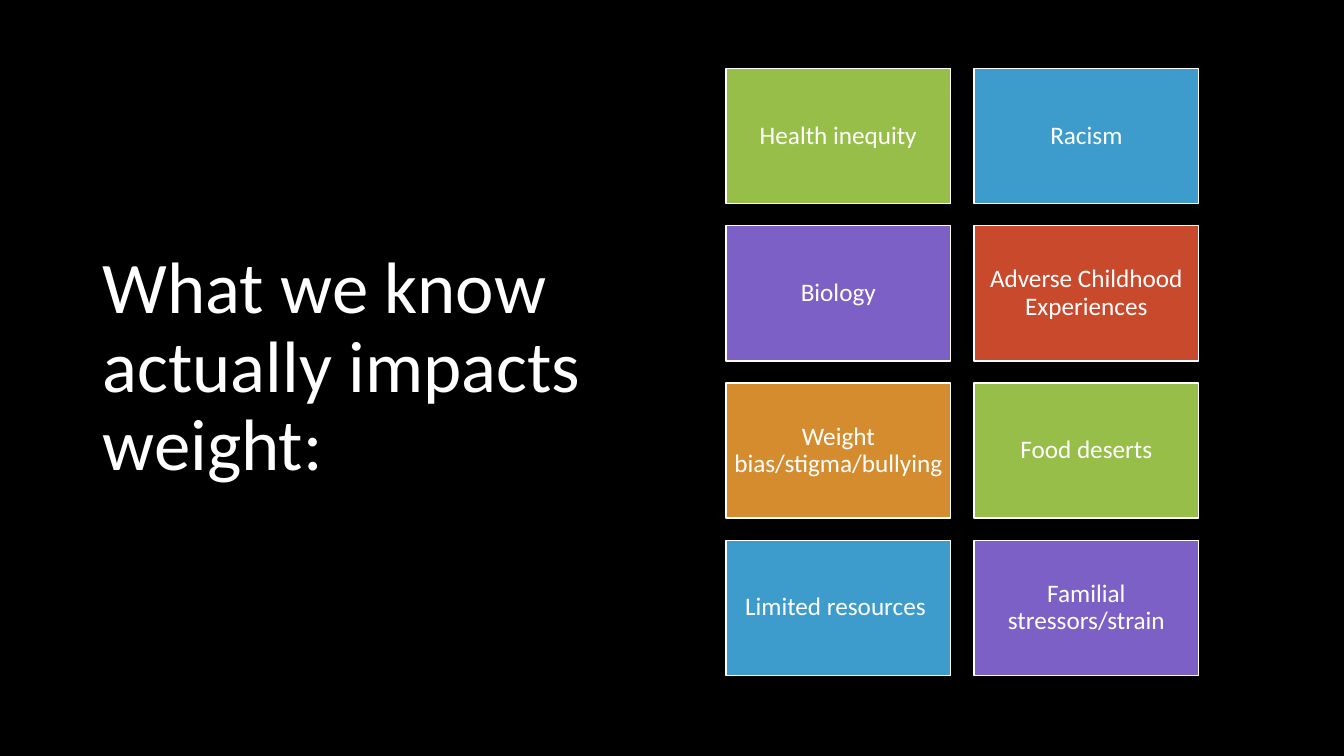
"""Build the slide on what actually impacts weight."""
from pptx import Presentation
from pptx.dml.color import RGBColor
from pptx.enum.shapes import MSO_SHAPE
from pptx.enum.text import MSO_ANCHOR, PP_ALIGN
from pptx.util import Inches, Pt

COLOURS = {
    "black": "000000",
    "white": "FFFFFF",
    "green": "97BE49",
    "blue": "3D9CCC",
    "purple": "7C60C6",
    "red": "C9492C",
    "orange": "D58C2E",
}
FACTORS = [
    ("Health inequity", "green"),
    ("Racism", "blue"),
    ("Biology", "purple"),
    ("Adverse Childhood Experiences", "red"),
    ("Weight bias/stigma/bullying", "orange"),
    ("Food deserts", "green"),
    ("Limited resources ", "blue"),
    ("Familial stressors/strain", "purple"),
]
COLUMNS = 2
GRID_LEFT, GRID_TOP = 7.2, 0.68
BOX_WIDTH, BOX_HEIGHT = 2.23, 1.34
COLUMN_STEP, ROW_STEP = 2.46, 1.56


def colour(name):
    return RGBColor.from_string(COLOURS[name])


def write(frame, text, size, alignment):
    frame.word_wrap = True
    frame.vertical_anchor = MSO_ANCHOR.MIDDLE
    para = frame.paragraphs[0]
    para.alignment = alignment
    para.line_spacing = 0.9
    span = para.add_run()
    span.text = text
    span.font.name = "Calibri"
    span.font.size = Pt(size)
    span.font.color.rgb = colour("white")


deck = Presentation()
deck.slide_width, deck.slide_height = Inches(13.33), Inches(7.5)
page = deck.slides.add_slide(deck.slide_layouts[5])
page.background.fill.solid()
page.background.fill.fore_color.rgb = colour("black")

title = page.shapes.title
title.left, title.top = Inches(0.92), Inches(0.61)
title.width, title.height = Inches(5.32), Inches(6.09)
write(title.text_frame, "What we know actually impacts weight:", 52, PP_ALIGN.LEFT)

for index, (factor, fill) in enumerate(FACTORS):
    row, column = divmod(index, COLUMNS)
    box = page.shapes.add_shape(
        MSO_SHAPE.RECTANGLE,
        Inches(GRID_LEFT + column * COLUMN_STEP),
        Inches(GRID_TOP + row * ROW_STEP),
        Inches(BOX_WIDTH),
        Inches(BOX_HEIGHT),
    )
    box.shadow.inherit = False
    box.fill.solid()
    box.fill.fore_color.rgb = colour(fill)
    box.line.color.rgb = colour("white")
    box.line.width = Pt(1)
    frame = box.text_frame
    frame.margin_left = frame.margin_right = Inches(0.07)
    frame.margin_top = frame.margin_bottom = Inches(0.07)
    write(frame, factor, 18, PP_ALIGN.CENTER)

deck.save("out.pptx")
